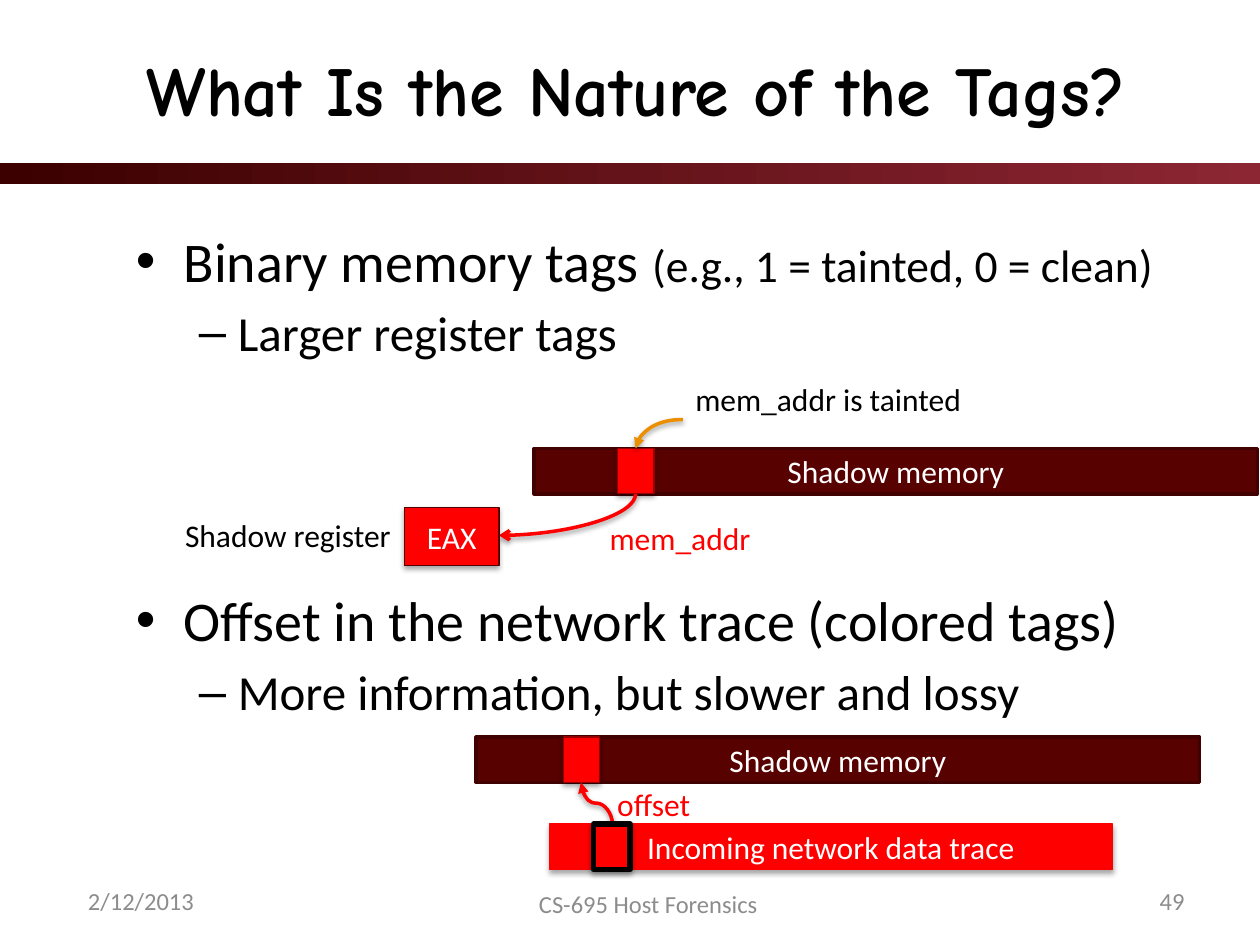
from dataclasses import dataclass

from lxml.etree import SubElement
from pptx import Presentation
from pptx.dml.color import RGBColor
from pptx.enum.shapes import MSO_CONNECTOR, MSO_SHAPE
from pptx.enum.text import MSO_ANCHOR, PP_ALIGN
from pptx.oxml.ns import qn
from pptx.util import Inches, Pt

COLORS = {
    "black": "000000", "white": "FFFFFF", "grey": "8C8C8C",
    "bar_dark": "3C0000", "bar_light": "8C2633",
    "memory": "580101", "memory_edge": "410101",
    "taint": "FF0000", "slot_edge": "960000", "register_edge": "570000",
    "orange": "EB8F00",
}
BODY, HEADING = "Calibri", "Comic Neue"
CELL = Inches(0.1)  # the slide is a grid of 100 columns by 75 rows
SLOT_W, BAR_W, BAR_H = 2.9, 57.4, 3.6


@dataclass
class Box:
    """A region in grid cells."""
    x: float
    y: float
    w: float
    h: float

    def sub(self, x, y, w, h):
        return Box(self.x + x, self.y + y, w, h)

    def emu(self):
        return [round(v * CELL) for v in (self.x, self.y, self.w, self.h)]


def rgb(name):
    return RGBColor.from_string(COLORS[name])


def style_font(p, size, color, name=BODY, bold=False):
    f = p.font
    f.size, f.name, f.bold = Pt(size), name, bold
    f.color.rgb = rgb(color)


def add_shadow(effects, alpha=35, dist=1.8):
    shadow = SubElement(effects, qn("a:outerShdw"), blurRad=str(Pt(3.1)),
                        dist=str(Pt(dist)), dir="5400000", rotWithShape="0")
    clr = SubElement(shadow, qn("a:srgbClr"), val=COLORS["black"])
    SubElement(clr, qn("a:alpha"), val=str(alpha * 1000))


def add_text(s, box, text, size=18, color="black", align=PP_ALIGN.LEFT,
             anchor=MSO_ANCHOR.MIDDLE, wrap=True, **font):
    tf = s.shapes.add_textbox(*box.emu()).text_frame
    tf.word_wrap, tf.vertical_anchor = wrap, anchor
    p = tf.paragraphs[0]
    p.text, p.alignment = text, align
    style_font(p, size, color, **font)


def add_label(s, box, text, color="black"):
    add_text(s, box, text, color=color, anchor=MSO_ANCHOR.TOP, wrap=False)


def add_block(s, box, fill, edge, width=0.75, text="", shadow=True):
    sp = s.shapes.add_shape(MSO_SHAPE.RECTANGLE, *box.emu())
    sp.fill.solid()
    sp.fill.fore_color.rgb = rgb(fill)
    sp.line.color.rgb = rgb(edge)
    sp.line.width = Pt(width)
    sp.shadow.inherit = False
    if shadow:
        add_shadow(sp._element.spPr.find(qn("a:effectLst")))
    if text:
        tf = sp.text_frame
        tf.word_wrap, tf.vertical_anchor = True, MSO_ANCHOR.MIDDLE
        p = tf.paragraphs[0]
        p.text, p.alignment = text, PP_ALIGN.CENTER
        style_font(p, 18, "white")


def add_curve(s, box, start, end, color, preset, **arrows):
    """Curve between two points of the box; arrows maps headEnd/tailEnd to a type."""
    ends = [round(v * CELL) for x, y in (start, end) for v in (box.x + x, box.y + y)]
    cn = s.shapes.add_connector(MSO_CONNECTOR.CURVE, *ends)
    cn.line.color.rgb = rgb(color)
    cn.line.width = Pt(2)
    sp_pr = cn._element.spPr
    sp_pr.find(qn("a:prstGeom")).set("prst", preset)
    for tag, kind in arrows.items():
        SubElement(sp_pr.find(qn("a:ln")), qn(f"a:{tag}"), type=kind)
    add_shadow(SubElement(sp_pr, qn("a:effectLst")), alpha=38, dist=1.6)
    return cn


def add_title(s, box, text):
    bar = s.shapes.add_shape(MSO_SHAPE.RECTANGLE, *Box(0, 12.95, 100, 1.7).emu())
    bar.fill.gradient()
    bar.fill.gradient_angle = 0
    for stop, color in zip(bar.fill.gradient_stops, ("bar_dark", "bar_light")):
        stop.color.rgb = rgb(color)
    bar.line.fill.background()
    bar.shadow.inherit = False
    add_text(s, box, text, 40, align=PP_ALIGN.CENTER, name=HEADING, bold=True)


def add_bullets(s, box, main, detail, aside=""):
    tf = s.shapes.add_textbox(*box.emu()).text_frame
    tf.word_wrap = True
    levels = ((main, "•", 32, 0.38, 0.38), (detail, "–", 28, 0.81, 0.31))
    for i, (text, mark, size, margin, hang) in enumerate(levels):
        p = tf.add_paragraph() if i else tf.paragraphs[0]
        p.text, p.level = text, i
        p_pr = p._p.get_or_add_pPr()
        p_pr.set("marL", str(Inches(margin)))
        p_pr.set("indent", str(-Inches(hang)))
        if i:
            p.space_before = Pt(5)
        SubElement(p_pr, qn("a:buFont"), typeface="Arial")
        SubElement(p_pr, qn("a:buChar"), char=mark)
        style_font(p, size, "black")
    if aside:
        r = tf.paragraphs[0].add_run()
        r.text, r.font.size = aside, Pt(26)


def add_memory(s, box, slot):
    add_block(s, box, "memory", "memory_edge", 2, "Shadow memory", shadow=False)
    add_block(s, box.sub(slot, 0, SLOT_W, BAR_H), "taint", "slot_edge")


def add_register_diagram(s, box):
    bar = box.sub(28.7, 5.9, BAR_W, BAR_H)
    slot = 6.6
    mid = slot + SLOT_W / 2
    add_memory(s, bar, slot)
    add_label(s, box.sub(40.5, 0, 23.3, 4), "mem_addr is tainted")
    add_curve(s, bar, (11.8, -2.3), (mid, 0), "orange", "curvedConnector2",
              tailEnd="triangle")
    add_label(s, box.sub(0, 10.8, 18.5, 4), "Shadow register")
    add_curve(s, bar, (-2.8, 6.9), (mid, BAR_H), "taint", "curvedConnector2",
              headEnd="arrow")
    add_label(s, box.sub(33.7, 11, 13.3, 4), "mem_addr", "taint")
    add_block(s, box.sub(18.4, 10.6, 7.5, 4.6), "taint", "register_edge", text="EAX")


def add_trace_diagram(s, box):
    add_block(s, box.sub(5.8, 6.9, 44.7, BAR_H), "taint", "taint",
              text="Incoming network data trace")
    add_memory(s, box.sub(0, 0, BAR_W, BAR_H), 6.9)
    # Turned a quarter so that the curve leaves and arrives upright
    cn = add_curve(s, box, (11.2, 4), (7.9, 6.5), "taint", "curvedConnector3",
                   headEnd="triangle")
    cn._element.spPr.find(qn("a:xfrm")).set("rot", str(270 * 60000))
    add_block(s, box.sub(9.3, 6.9, SLOT_W, BAR_H), "taint", "black", 3)
    add_label(s, box.sub(10.2, 3.3, 7.9, 4), "offset", "taint")


def add_footer(s, box, date, course, number):
    for x, y, w, text, align in ((0, 0, 18.3, date, PP_ALIGN.LEFT),
                                 (33, 0.2, 24.9, course, PP_ALIGN.CENTER),
                                 (box.w - 18.3, 0, 18.3, number, PP_ALIGN.RIGHT)):
        add_text(s, box.sub(x, y, w, box.h), text, 14, "grey", align)


def main():
    prs = Presentation()
    prs.slide_width, prs.slide_height = 100 * CELL, 75 * CELL
    s = prs.slides.add_slide(prs.slide_layouts[6])
    add_title(s, Box(6, 1.5, 89, 11), "What Is the Nature of the Tags?")
    add_bullets(s, Box(9.8, 17.5, 85.2, 20.3), "Binary memory tags ",
                "Larger register tags", "(e.g., 1 = tainted, 0 = clean)")
    add_bullets(s, Box(9.8, 46, 85.2, 15.7), "Offset in the network trace (colored tags)",
                "More information, but slower and lossy")
    add_register_diagram(s, Box(13.7, 29.7, 86.1, 15.2))
    add_trace_diagram(s, Box(37.8, 58.5, BAR_W, 10.5))
    add_footer(s, Box(6, 69.5, 89, 4), "2/12/2013", "CS-695 Host Forensics", "49")
    prs.save("out.pptx")


if __name__ == "__main__":
    main()
